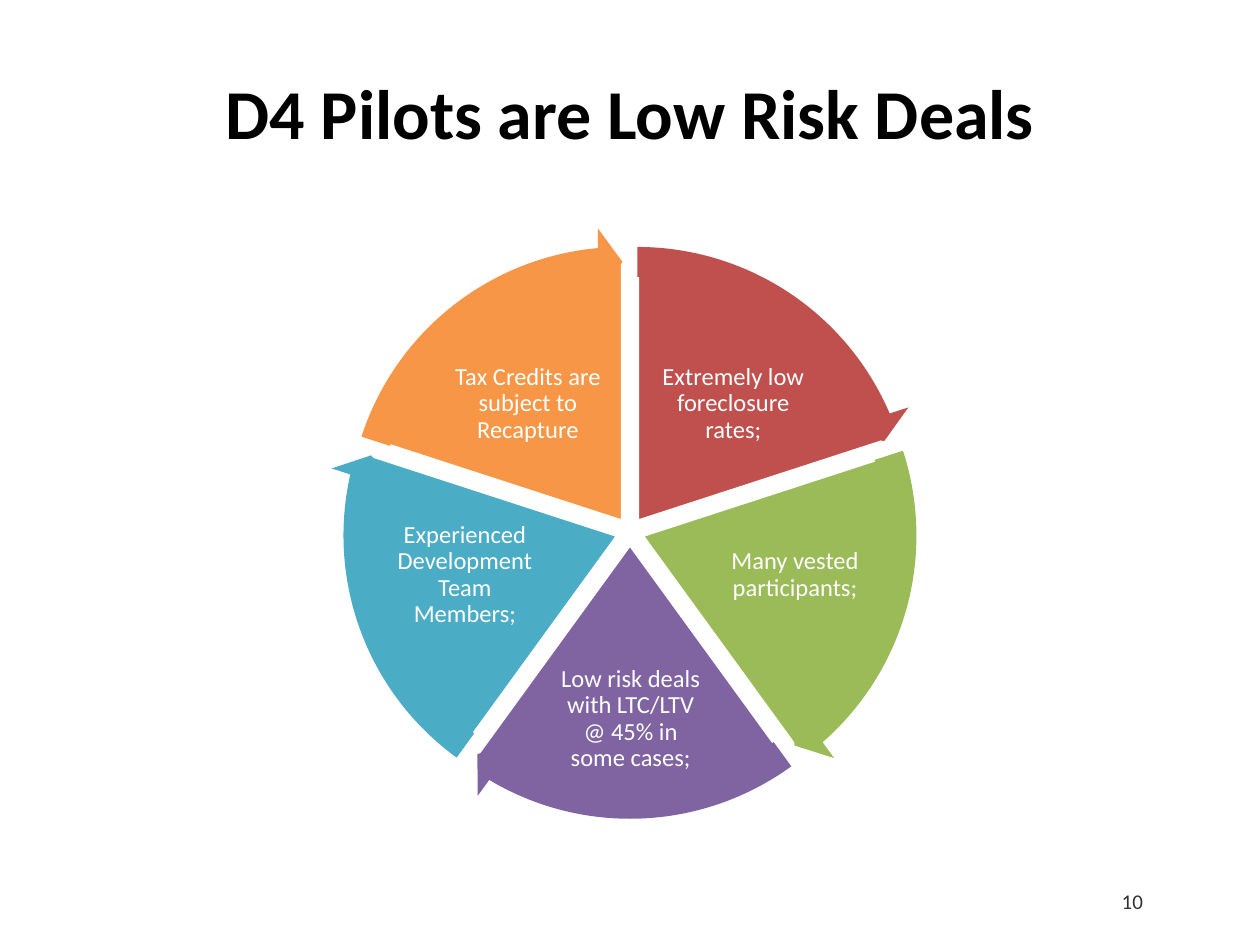
import math

import pptx
import pptx.dml.color
import pptx.enum.shapes
import pptx.enum.text
import pptx.oxml
import pptx.oxml.ns
import pptx.util
from pptx.util import Inches

COLORS = {"black": "000000", "white": "FFFFFF", "red": "C0504D", "green": "9BBB59",
          "purple": "8064A2", "teal": "4BACC6", "orange": "F79646"}
SHAPES = pptx.enum.shapes.MSO_SHAPE
ALIGN = pptx.enum.text.PP_ALIGN

# Wheel geometry; adjustment angles count 216 units to the full turn
CENTER_X, CENTER_Y, OFFSET = 5, 4.22, 0.1
PIE_SIZE, ARROW_SIZE = 4.16, 4.67
FULL_TURN, TOP, HEAD_ANGLE = 216, 162, 3.275

# Text, colour and label box of each slice, clockwise from the top
REASONS = [
    ("Extremely low foreclosure rates;", "red", (5.15, 2.76, 1.34, 0.89)),
    ("Many vested participants;", "green", (5.69, 4.07, 1.24, 0.99)),
    ("Low risk deals with LTC/LTV @ 45% in some cases;", "purple", (4.41, 5.16, 1.19, 1.09)),
    ("Experienced Development Team Members;", "teal", (3.07, 4.07, 1.24, 0.99)),
    ("Tax Credits are subject to Recapture", "orange", (3.52, 2.76, 1.34, 0.89)),
]


def rgb(name):
    return pptx.dml.color.RGBColor.from_string(COLORS[name])


def set_all(target, values):
    for attribute, value in values.items():
        setattr(target, attribute, value)


class SlideBuilder:
    font_name = "Calibri"

    def __init__(self, slide):
        self.slide = slide

    def style_text(self, shape, text, size, color, align, bold=False, inset=None, **spacing):
        frame = shape.text_frame
        set_all(frame, {"word_wrap": True,
                        "auto_size": pptx.enum.text.MSO_AUTO_SIZE.NONE,
                        "vertical_anchor": pptx.enum.text.MSO_ANCHOR.MIDDLE})
        if inset is not None:
            sides = ("left", "top", "right", "bottom")
            set_all(frame, {f"margin_{side}": Inches(inset) for side in sides})
        paragraph = frame.paragraphs[0]
        set_all(paragraph, {"alignment": align, **spacing})
        run = paragraph.add_run()
        run.text = text
        set_all(run.font, {"name": self.font_name, "size": pptx.util.Pt(size), "bold": bold})
        run.font.color.rgb = rgb(color)
        return run

    def title(self, text, box):
        title = self.slide.shapes.title
        set_all(title, dict(zip(("left", "top", "width", "height"), map(Inches, box))))
        self.style_text(title, text, 40, "black", ALIGN.CENTER, bold=True, line_spacing=0.9)

    def text(self, text, box, size, color, align, **options):
        label = self.slide.shapes.add_textbox(*map(Inches, box))
        return self.style_text(label, text, size, color, align, **options)

    def wheel_part(self, kind, center, size, color, adjustments, outline=None):
        left, top = (Inches(middle - size / 2) for middle in center)
        part = self.slide.shapes.add_shape(kind, left, top, Inches(size), Inches(size))
        part.shadow.inherit = False
        for index, value in enumerate(adjustments):
            part.adjustments[index] = value
        part.fill.solid()
        part.fill.fore_color.rgb = rgb(color)
        if outline:
            part.line.color.rgb = rgb(outline)
            part.line.width = pptx.util.Pt(2)
        else:
            part.line.fill.background()


def main():
    deck = pptx.Presentation()
    set_all(deck, {"slide_width": Inches(10), "slide_height": Inches(7.5)})
    builder = SlideBuilder(deck.slides.add_slide(deck.slide_layouts[5]))
    builder.title("D4 Pilots are Low Risk Deals", (0.5, 0.3, 9, 1.25))

    # Slices, each pushed outward along its middle angle, with labels
    step = FULL_TURN / len(REASONS)
    arrows = []
    for index, (reason, color, box) in enumerate(REASONS):
        start = (TOP + index * step) % FULL_TURN
        end = (start + step) % FULL_TURN
        middle = math.tau * (start + step / 2) / FULL_TURN
        center = (CENTER_X + OFFSET * math.cos(middle), CENTER_Y + OFFSET * math.sin(middle))
        builder.wheel_part(SHAPES.PIE, center, PIE_SIZE, color, (start, end), "white")
        builder.text(reason, box, 14, "white", ALIGN.CENTER, inset=0.02,
                     line_spacing=0.9, space_after=pptx.util.Pt(4.9))
        arrows.append((center, color, (0.051, HEAD_ANGLE, end - HEAD_ANGLE, start, 0.059)))

    # Rim arrows in front of all slices
    for center, color, adjustments in arrows:
        builder.wheel_part(SHAPES.CIRCULAR_ARROW, center, ARROW_SIZE, color, adjustments)

    # Page number in 80% black
    number = builder.text("10", (7.17, 6.95, 2, 0.4), 12, "black", ALIGN.RIGHT,
                          space_after=pptx.util.Pt(4.5))
    ink = number._r.find(".//" + pptx.oxml.ns.qn("a:srgbClr"))
    ink.append(pptx.oxml.parse_xml(
        f'<a:alpha {pptx.oxml.ns.nsdecls("a")} val="80000"/>'))

    deck.save("out.pptx")


if __name__ == "__main__":
    main()
